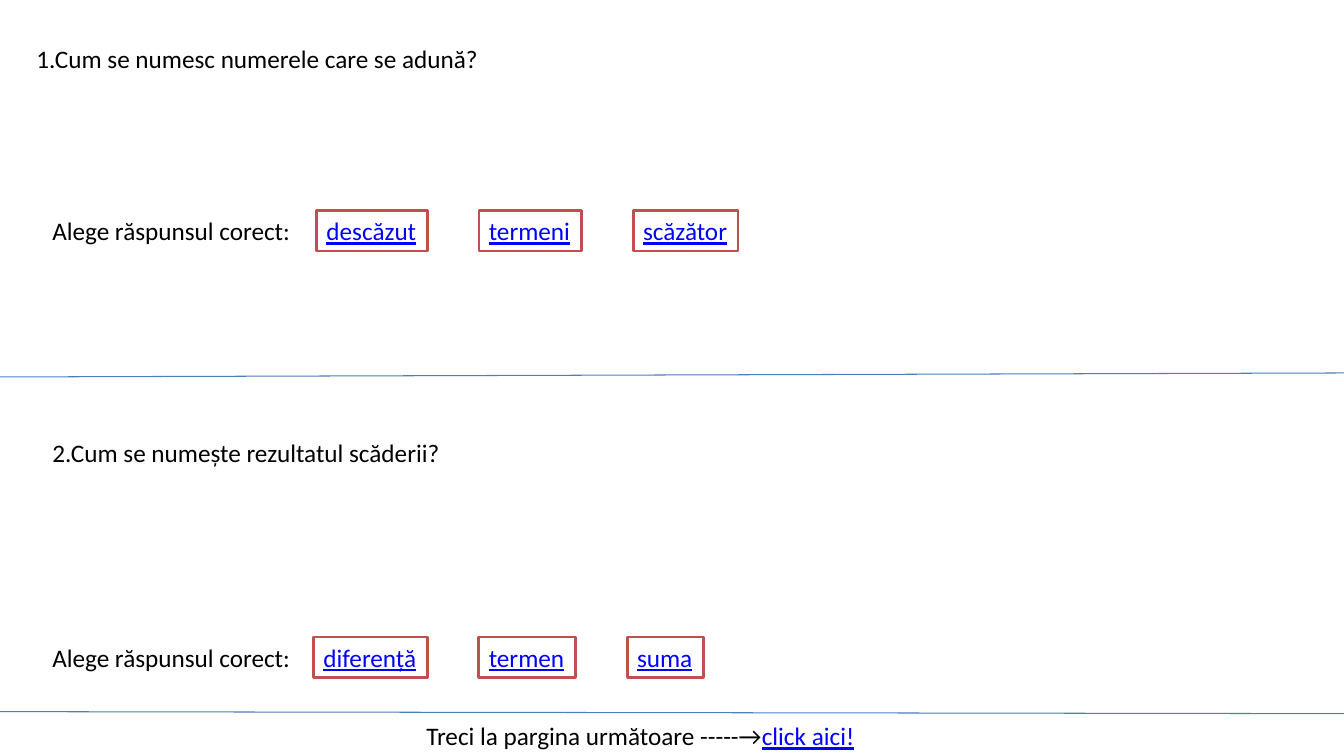
from dataclasses import dataclass

from lxml.etree import SubElement
from pptx import Presentation
from pptx.dml.color import RGBColor
from pptx.enum.shapes import MSO_CONNECTOR as Link, MSO_SHAPE as Kind
from pptx.enum.text import MSO_ANCHOR as Anchor, MSO_AUTO_SIZE as Auto, PP_ALIGN as Align
from pptx.oxml.ns import qn
from pptx.util import Inches, Pt

BLACK = RGBColor(0x00, 0x00, 0x00)
WHITE = RGBColor(0xFF, 0xFF, 0xFF)
BLUE = RGBColor(0x00, 0x00, 0xFF)
RED = RGBColor(0xC0, 0x50, 0x4D)
STEEL = RGBColor(0x4B, 0x7E, 0xBC)
WIDTH = 13.33
ROW = 0.4


@dataclass
class Choice:
    text: str
    left: float
    width: float


@dataclass
class Quiz:
    top: float
    choices: list[Choice]


@dataclass
class Rule:
    start: float
    end: float


QUIZZES = [
    Quiz(2.09, [
        Choice("descăzut", 3.14, 1.1),
        Choice("termeni", 4.75, 1.02),
        Choice("scăzător", 6.28, 1.04),
    ]),
    Quiz(6.32, [
        Choice("diferență", 3.11, 1.13),
        Choice("termen", 4.75, 0.96),
        Choice("suma", 6.22, 0.76),
    ]),
]
RULES = [Rule(3.74, 3.7), Rule(7.06, 7.08)]


def write(shape, text: str, *, color=BLACK, line=False, wrap=False, auto=Auto.SHAPE_TO_FIT_TEXT) -> None:
    """Append a run to the first paragraph of the shape and format it."""
    frame = shape.text_frame
    frame.word_wrap = wrap
    frame.auto_size = auto
    frame.vertical_anchor = Anchor.TOP
    par = frame.paragraphs[0]
    par.alignment = Align.LEFT
    run = par.add_run()
    run.text = text
    font = run.font
    font.name = "Calibri"
    font.size = Pt(18)
    font.color.rgb = color
    font.underline = line


def add_label(slide, text: str, left: float, top: float, width: float):
    label = slide.shapes.add_textbox(Inches(left), Inches(top), Inches(width), Inches(ROW))
    write(label, text)
    return label


def add_choice(slide, choice: Choice, top: float) -> None:
    box = slide.shapes.add_shape(
        Kind.RECTANGLE, Inches(choice.left), Inches(top), Inches(choice.width), Inches(ROW))
    box.shadow.inherit = False
    box.fill.solid()
    box.fill.fore_color.rgb = WHITE
    box.line.color.rgb = RED
    box.line.width = Pt(2)
    write(box, choice.text, color=BLUE, line=True)


def add_rule(slide, rule: Rule) -> None:
    line = slide.shapes.add_connector(
        Link.STRAIGHT, Inches(0), Inches(rule.start), Inches(WIDTH), Inches(rule.end))
    line.line.color.rgb = STEEL
    line.line.width = Pt(0.75)
    SubElement(line._element.spPr, qn("a:effectLst"))


def main() -> None:
    deck = Presentation()
    deck.slide_width, deck.slide_height = Inches(WIDTH), Inches(7.5)
    slide = deck.slides.add_slide(deck.slide_layouts[5])

    title = slide.shapes.title
    title.left, title.top = Inches(0.26), Inches(0.38)
    title.width, title.height = Inches(12.81), Inches(ROW)
    write(title, "1.Cum se numesc numerele care se adună?", wrap=True, auto=Auto.NONE)

    for rule in RULES:
        add_rule(slide, rule)
    add_label(slide, "2.Cum se numește rezultatul scăderii?", 0.42, 4.29, 4.09)
    for quiz in QUIZZES:
        add_label(slide, "Alege răspunsul corect:", 0.42, quiz.top, 2.59)
        for choice in quiz.choices:
            add_choice(slide, choice, quiz.top)

    footer = add_label(slide, "Treci la pargina următoare -----→", 4.13, 7.1, 4.51)
    write(footer, "click aici!", color=BLUE, line=True)
    deck.save("out.pptx")


if __name__ == "__main__":
    main()
